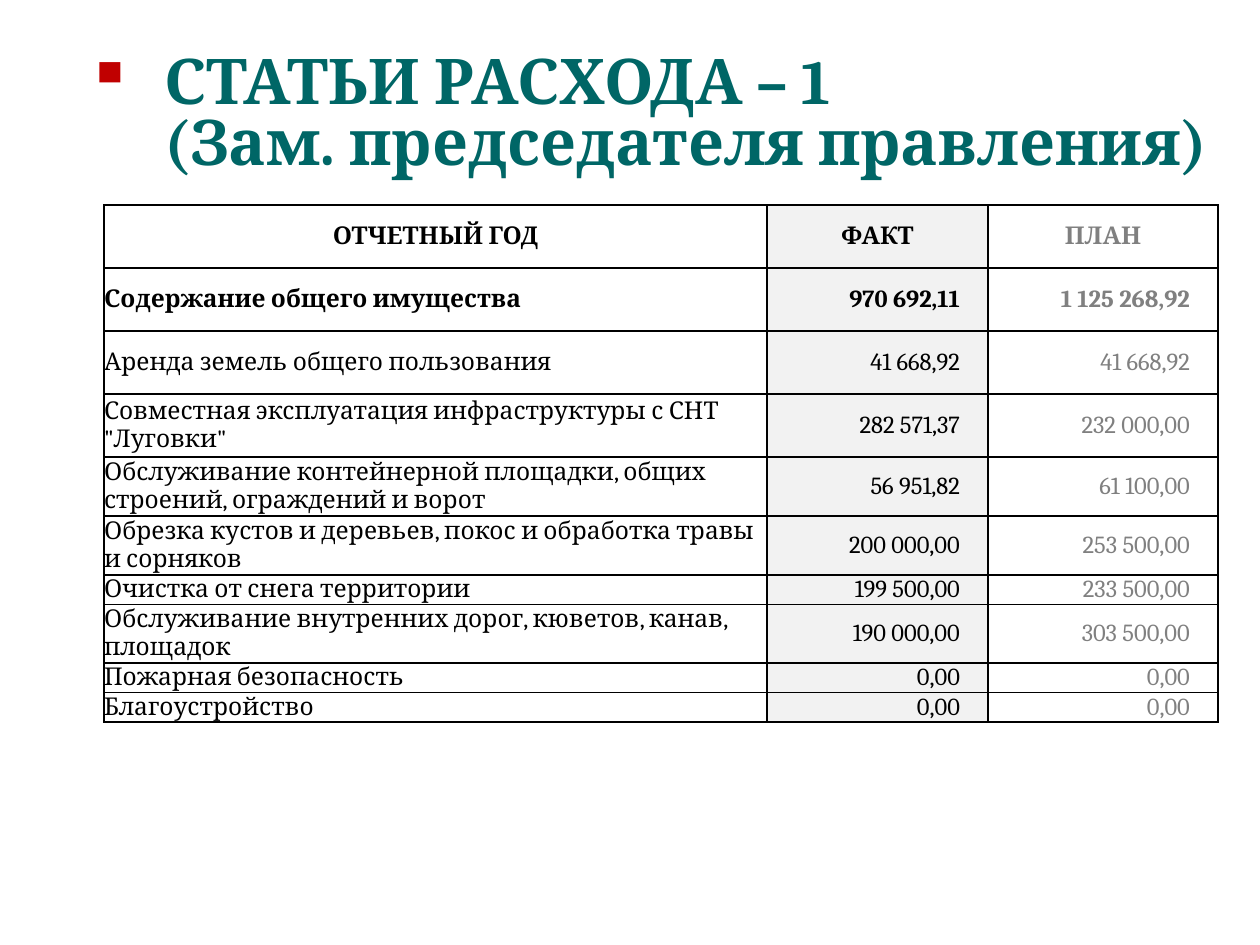
from dataclasses import dataclass

from lxml.etree import SubElement
from pptx import Presentation
from pptx.dml.color import RGBColor
from pptx.enum.text import MSO_ANCHOR, PP_ALIGN
from pptx.oxml.ns import qn
from pptx.util import Emu, Pt

FONT = "Cambria"
BLACK, GRAY, TEAL, RED, PALE = "000000", "808080", "006666", "C00000", "F2F2F2"
AMOUNT_MARGIN = 28
HEADERS = ("ОТЧЕТНЫЙ ГОД", "ФАКТ", "ПЛАН")


@dataclass(frozen=True)
class Column:
    width: int
    color: str
    align: PP_ALIGN
    right_margin: int = 0
    fill: str | None = None


@dataclass(frozen=True)
class Expense:
    name: str
    fact: str
    plan: str
    height: int
    bold: bool = False


COLUMNS = (
    Column(663, BLACK, PP_ALIGN.LEFT),
    Column(221, BLACK, PP_ALIGN.RIGHT, AMOUNT_MARGIN, PALE),
    Column(230, GRAY, PP_ALIGN.RIGHT, AMOUNT_MARGIN),
)
EXPENSES = (
    Expense("Содержание общего имущества", "970 692,11", "1 125 268,92", 63, True),
    Expense("Аренда земель общего пользования", "41 668,92", "41 668,92", 63),
    Expense('Совместная эксплуатация инфраструктуры с СНТ "Луговки"',
            "282 571,37", "232 000,00", 63),
    Expense("Обслуживание контейнерной площадки, общих строений, ограждений и ворот",
            "56 951,82", "61 100,00", 24),
    Expense("Обрезка кустов и деревьев, покос и обработка травы и сорняков",
            "200 000,00", "253 500,00", 24),
    Expense("Очистка от снега территории", "199 500,00", "233 500,00", 24),
    Expense("Обслуживание внутренних дорог, кюветов, канав, площадок",
            "190 000,00", "303 500,00", 24),
    Expense("Пожарная безопасность", "0,00", "0,00", 20),
    Expense("Благоустройство", "0,00", "0,00", 20),
)


def px(length: int) -> Emu:
    return Emu(round(length * 914400 / 126))


def rgb(value: str) -> RGBColor:
    return RGBColor.from_string(value)


def set_font(para, size: int, color: str, bold: bool) -> None:
    para.font.name = FONT
    para.font.size = Pt(size)
    para.font.bold = bold
    para.font.color.rgb = rgb(color)


def add_bullet(para, char: str, color: str, indent: int) -> None:
    properties = para._p.get_or_add_pPr()
    properties.set("marL", str(px(indent)))
    properties.set("indent", str(-px(indent)))
    bullet_color = SubElement(properties, qn("a:buClr"))
    SubElement(bullet_color, qn("a:srgbClr"), val=color)
    SubElement(properties, qn("a:buChar"), char=char)


def add_title(page) -> None:
    box = page.shapes.add_textbox(px(74), px(38), px(1160), px(158))
    frame = box.text_frame
    frame.word_wrap = True
    frame.vertical_anchor = MSO_ANCHOR.MIDDLE
    frame.text = "СТАТЬИ РАСХОДА – 1\v(Зам. председателя правления)"
    para = frame.paragraphs[0]
    para.line_spacing = 0.8
    add_bullet(para, "▪", RED, 78)
    set_font(para, 36, TEAL, True)


def add_borders(cell, color: str) -> None:
    properties = cell._tc.get_or_add_tcPr()
    for side in ("lnL", "lnR", "lnT", "lnB"):
        line = SubElement(properties, qn(f"a:{side}"), w=str(Pt(1)))
        solid = SubElement(line, qn("a:solidFill"))
        SubElement(solid, qn("a:srgbClr"), val=color)


def fill_cell(cell, text: str, column: Column, align: PP_ALIGN,
              right_margin: int, bold: bool) -> None:
    cell.margin_left = cell.margin_top = cell.margin_bottom = 0
    cell.margin_right = px(right_margin)
    cell.vertical_anchor = MSO_ANCHOR.MIDDLE
    add_borders(cell, BLACK)
    if column.fill:
        cell.fill.solid()
        cell.fill.fore_color.rgb = rgb(column.fill)
    else:
        cell.fill.background()
    cell.text = text
    para = cell.text_frame.paragraphs[0]
    para.alignment = align
    set_font(para, 14, column.color, bold)


def add_expense_table(page) -> None:
    heights = [63] + [expense.height for expense in EXPENSES]
    width = sum(column.width for column in COLUMNS)
    table = page.shapes.add_table(len(heights), len(COLUMNS), px(104), px(205),
                                  px(width), px(sum(heights))).table
    table.first_row = table.horz_banding = False
    for row, height in zip(table.rows, heights):
        row.height = px(height)
    for index, column in enumerate(COLUMNS):
        table.columns[index].width = px(column.width)
        fill_cell(table.cell(0, index), HEADERS[index], column, PP_ALIGN.CENTER, 0, True)
        for row, expense in enumerate(EXPENSES, start=1):
            text = (expense.name, expense.fact, expense.plan)[index]
            fill_cell(table.cell(row, index), text, column, column.align,
                      column.right_margin, expense.bold)


def main() -> None:
    deck = Presentation()
    deck.slide_width, deck.slide_height = px(1260), px(945)
    page = deck.slides.add_slide(deck.slide_layouts[6])
    add_title(page)
    add_expense_table(page)
    deck.save("out.pptx")


if __name__ == "__main__":
    main()
